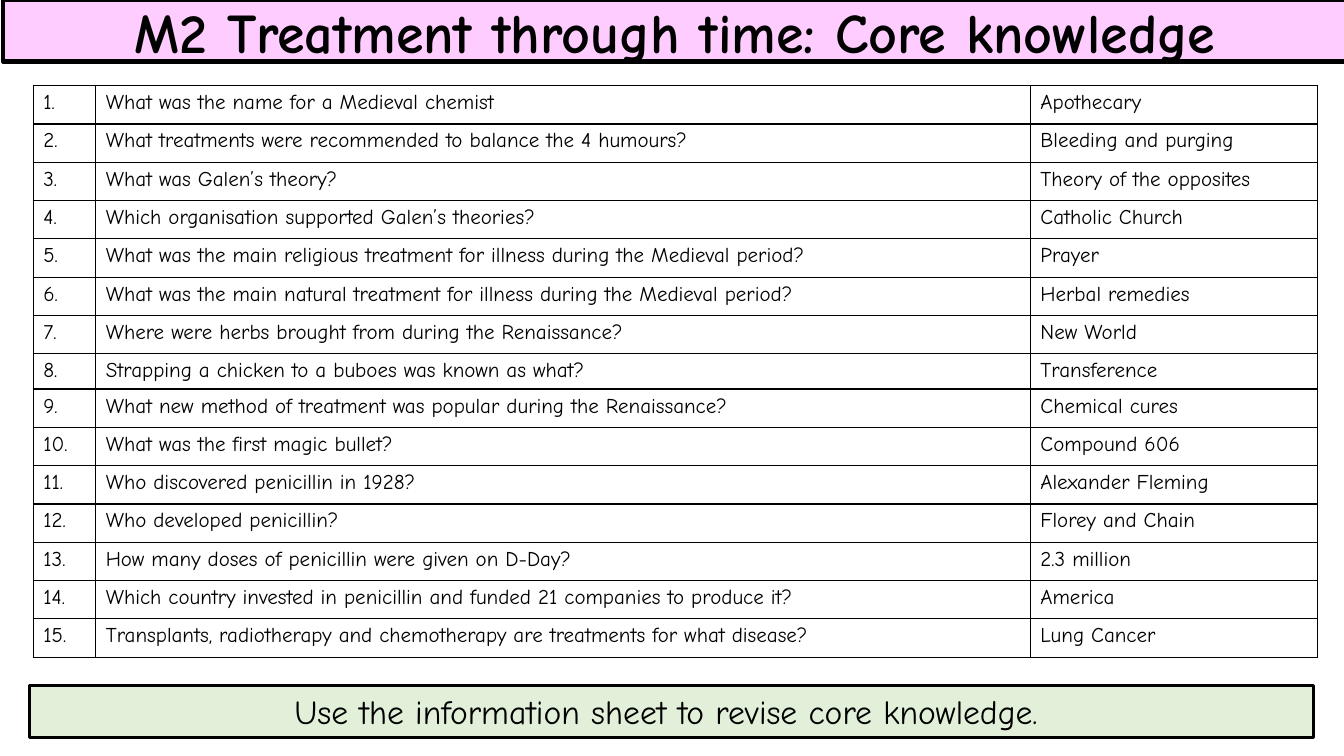
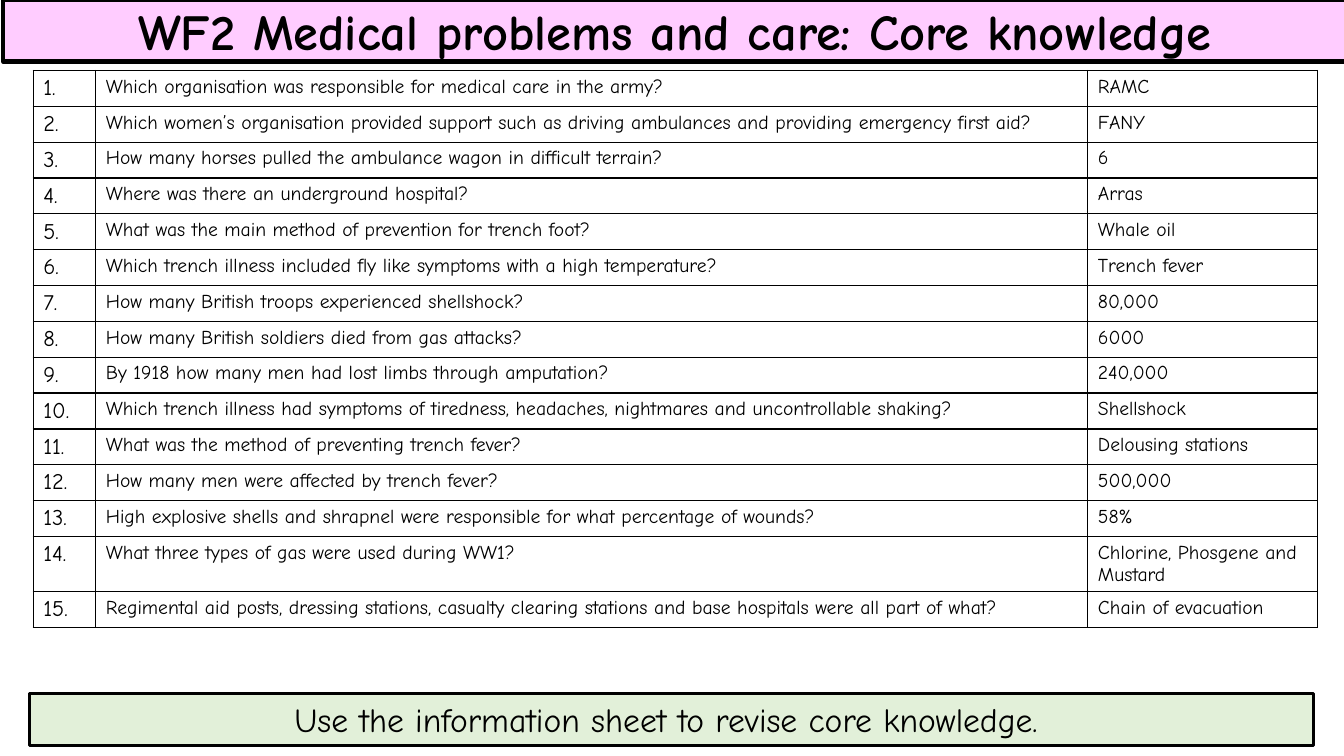
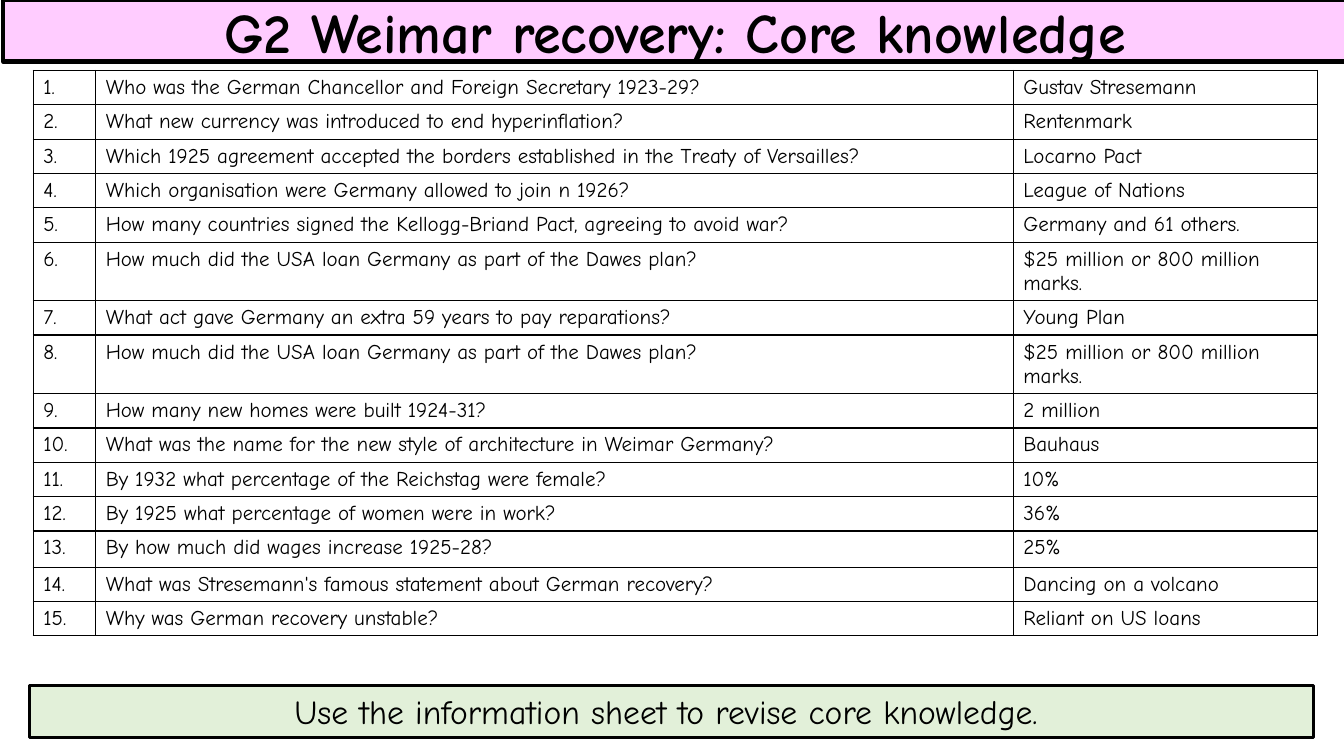
import pptx
import pptx.util
import pptx.dml.color
import pptx.enum.shapes
import pptx.enum.text
import lxml.etree
from pptx.util import Inches, Pt
from pptx.dml.color import RGBColor

PINK = RGBColor(0xFF, 0xCC, 0xFF)
GREEN = RGBColor(0xE2, 0xF0, 0xD9)
WHITE = RGBColor(0xFF, 0xFF, 0xFF)
BLACK = RGBColor(0x00, 0x00, 0x00)
FONT = "Comic Neue"
REMINDER = "Use the information sheet to revise core knowledge. "
NUMBER_WIDTH = 0.62
TABLE_WIDTH = 12.74

quizzes = [
    {
        "heading": "M2 Treatment through time: Core knowledge",
        "heading_size": 40, "reminder_top": 6.8, "table_top": 0.85,
        "answer_width": 2.85, "number_size": 15, "text_size": 15,
        "row_height": 0.38, "special_heights": {8: 0.35},
        "questions": [
            ("What was the name for a Medieval chemist", "Apothecary"),
            ("What treatments were recommended to balance the 4 humours?", "Bleeding and purging"),
            ("What was Galen’s theory?", "Theory of the opposites"),
            ("Which organisation supported Galen’s theories?", "Catholic Church"),
            ("What was the main religious treatment for illness during the Medieval period?", "Prayer"),
            ("What was the main natural treatment for illness during the Medieval period?", "Herbal remedies"),
            ("Where were herbs brought from during the Renaissance?", "New World"),
            ("Strapping a chicken to a buboes was known as what?", "Transference"),
            ("What new method of treatment was popular during the Renaissance?", "Chemical cures"),
            ("What was the first magic bullet?", "Compound 606"),
            ("Who discovered penicillin in 1928?", "Alexander Fleming"),
            ("Who developed penicillin?", "Florey and Chain"),
            ("How many doses of penicillin were given on D-Day?", "2.3 million"),
            ("Which country invested in penicillin and funded 21 companies to produce it?", "America"),
            ("Transplants, radiotherapy and chemotherapy are treatments for what disease?", "Lung Cancer"),
        ],
    },
    {
        "heading": "WF2 Medical problems and care: Core knowledge",
        "heading_size": 36, "reminder_top": 6.88, "table_top": 0.7,
        "answer_width": 2.28, "number_size": 16, "text_size": 14,
        "row_height": 0.35, "special_heights": {14: 0.54},
        "questions": [
            ("Which organisation was responsible for medical care in the army?", "RAMC"),
            ("Which women’s organisation provided support such as driving ambulances and providing emergency first aid?", "FANY"),
            ("How many horses pulled the ambulance wagon in difficult terrain?", "6"),
            ("Where was there an underground hospital?", "Arras"),
            ("What was the main method of prevention for trench foot?", "Whale oil"),
            ("Which trench illness included fly like symptoms with a high temperature?", "Trench fever"),
            ("How many British troops experienced shellshock?", "80,000"),
            ("How many British soldiers died from gas attacks?", "6000"),
            ("By 1918 how many men had lost limbs through amputation?", "240,000"),
            ("Which trench illness had symptoms of tiredness, headaches, nightmares and uncontrollable shaking?", "Shellshock"),
            ("What was the method of preventing trench fever?", "Delousing stations"),
            ("How many men were affected by trench fever?", "500,000"),
            ("High explosive shells and shrapnel were responsible for what percentage of wounds?", "58%"),
            ("What three types of gas were used during WW1?", "Chlorine, Phosgene and Mustard"),
            ("Regimental aid posts, dressing stations, casualty clearing stations and base hospitals were all part of what?", "Chain of evacuation"),
        ],
    },
    {
        "heading": "G2 Weimar recovery: Core knowledge",
        "heading_size": 40, "reminder_top": 6.8, "table_top": 0.7,
        "answer_width": 3.02, "number_size": 15, "text_size": 15,
        "row_height": 0.34, "special_heights": {6: 0.57, 8: 0.57, 13: 0.36},
        "questions": [
            ("Who was the German Chancellor and Foreign Secretary 1923-29?", "Gustav Stresemann"),
            ("What new currency was introduced to end hyperinflation?", "Rentenmark"),
            ("Which 1925 agreement accepted the borders established in the Treaty of Versailles?", "Locarno Pact"),
            ("Which organisation were Germany allowed to join n 1926?", "League of Nations"),
            ("How many countries signed the Kellogg-Briand Pact, agreeing to avoid war?", "Germany and 61 others."),
            ("How much did the USA loan Germany as part of the Dawes plan?", "$25 million or 800 million marks."),
            ("What act gave Germany an extra 59 years to pay reparations?", "Young Plan"),
            ("How much did the USA loan Germany as part of the Dawes plan?", "$25 million or 800 million marks."),
            ("How many new homes were built 1924-31?", "2 million"),
            ("What was the name for the new style of architecture in Weimar Germany?", "Bauhaus"),
            ("By 1932 what percentage of the Reichstag were female?", "10%"),
            ("By 1925 what percentage of women were in work?", "36%"),
            ("By how much did wages increase 1925-28?", "25%"),
            ("What was Stresemann's famous statement about German recovery?", "Dancing on a volcano"),
            ("Why was German recovery unstable?", "Reliant on US loans"),
        ],
    },
]


def write(frame, text, size, bold=False, align=pptx.enum.text.PP_ALIGN.LEFT):
    frame.text = text
    frame.word_wrap = True
    paragraph = frame.paragraphs[0]
    paragraph.alignment = align
    paragraph.font.name = FONT
    paragraph.font.size = Pt(size)
    paragraph.font.bold = bold
    paragraph.font.color.rgb = BLACK


def style_band(band, fill, line_width, anchor, text, size, bold):
    band.fill.solid()
    band.fill.fore_color.rgb = fill
    band.line.color.rgb = BLACK
    band.line.width = Pt(line_width)
    write(band.text_frame, text, size, bold, pptx.enum.text.PP_ALIGN.CENTER)
    band.text_frame.auto_size = pptx.enum.text.MSO_AUTO_SIZE.NONE
    band.text_frame.vertical_anchor = anchor


deck = pptx.Presentation()
deck.slide_width = Inches(13.33)
deck.slide_height = Inches(7.5)

for quiz in quizzes:
    slide = deck.slides.add_slide(deck.slide_layouts[5])

    heading = slide.shapes.title
    heading.left, heading.top = Inches(0.03), Inches(0)
    heading.width, heading.height = Inches(13.33), Inches(0.61)
    style_band(heading, PINK, 3, pptx.enum.text.MSO_ANCHOR.MIDDLE,
               quiz["heading"], quiz["heading_size"], True)

    reminder = slide.shapes.add_shape(
        pptx.enum.shapes.MSO_SHAPE.RECTANGLE,
        Inches(0.29), Inches(quiz["reminder_top"]), Inches(TABLE_WIDTH), Inches(0.52))
    reminder.shadow.inherit = False
    style_band(reminder, GREEN, 2.25, pptx.enum.text.MSO_ANCHOR.TOP, REMINDER, 24, False)

    questions = quiz["questions"]
    heights = [quiz["special_heights"].get(number, quiz["row_height"])
               for number in range(1, len(questions) + 1)]
    answers = slide.shapes.add_table(
        len(questions), 3, Inches(0.33), Inches(quiz["table_top"]),
        Inches(TABLE_WIDTH), Inches(sum(heights))).table
    answers.first_row = False
    answers.horz_banding = False

    question_width = TABLE_WIDTH - NUMBER_WIDTH - quiz["answer_width"]
    for column, width in zip(answers.columns, (NUMBER_WIDTH, question_width, quiz["answer_width"])):
        column.width = Inches(width)

    sizes = (quiz["number_size"], quiz["text_size"], quiz["text_size"])
    for number, (row, height, entry) in enumerate(zip(answers.rows, heights, questions), 1):
        row.height = Inches(height)
        for cell, text, size in zip(row.cells, (f"{number}.", *entry), sizes):
            write(cell.text_frame, text, size)
            properties = cell._tc.get_or_add_tcPr()
            for side in ("lnL", "lnR", "lnT", "lnB"):
                border = lxml.etree.SubElement(
                    properties, pptx.oxml.ns.qn(f"a:{side}"), w=str(Pt(1)))
                paint = lxml.etree.SubElement(border, pptx.oxml.ns.qn("a:solidFill"))
                lxml.etree.SubElement(paint, pptx.oxml.ns.qn("a:srgbClr"), val=str(BLACK))
            cell.fill.solid()
            cell.fill.fore_color.rgb = WHITE

deck.save("out.pptx")
